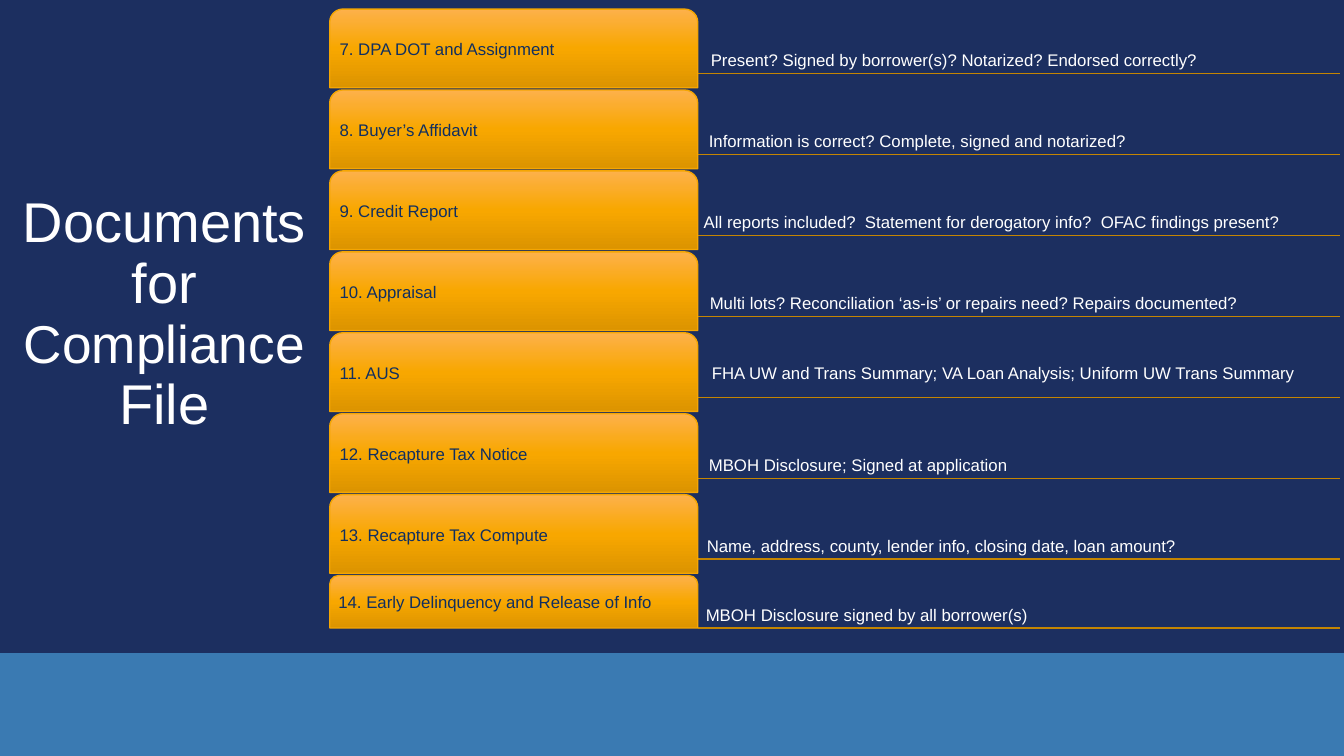
from copy import deepcopy
from dataclasses import dataclass

from lxml import etree
from pptx import Presentation
from pptx.dml.color import RGBColor
from pptx.enum.shapes import MSO_CONNECTOR, MSO_SHAPE
from pptx.enum.text import MSO_ANCHOR, MSO_AUTO_SIZE, PP_ALIGN
from pptx.oxml.ns import qn
from pptx.util import Inches, Pt

RECTANGLE = MSO_SHAPE.RECTANGLE
TAB = MSO_SHAPE.ROUND_2_SAME_RECTANGLE
STRAIGHT = MSO_CONNECTOR.STRAIGHT
MIDDLE, BOTTOM = MSO_ANCHOR.MIDDLE, MSO_ANCHOR.BOTTOM
LEFT, CENTER = PP_ALIGN.LEFT, PP_ALIGN.CENTER
NO_AUTOFIT = MSO_AUTO_SIZE.NONE


@dataclass(frozen=True)
class Theme:
    font: str = "Arial"
    background: str = "1C2F60"
    footer: str = "3A7AB2"
    light: str = "FFFFFF"
    dark: str = "112F60"
    rule: str = "C48502"
    tab_edge: str = "F5A603"
    tab_gradient: tuple = ((0, "FDB14B"), (0.5, "F8A700"), (1, "DC9400"))
    title_size: float = 40
    long_word_size: float = 38
    body_size: float = 12
    line_width: float = 1
    line_spacing: float = 0.9


THEME = Theme()
WIDTH, HEIGHT = 13.33, 7.5
FOOTER_HEIGHT = 1.02
TITLE_BOX = (0.11, 1.92, 3.04, 2.46)
CHECKLIST_BOX = (3.27, 0.09, 10.02, 6.14)
ROW_PITCH = 0.8
ROW_PITCH = 0.8 + 0.02 / 7
TAB_WIDTH, TAB_HEIGHT = 3.65, 0.78
RULE_DROP = 0.64
ANSWER_HEIGHT = 0.52
INSET = 0.03

TITLE_PARTS = (
    ("Documents for ", THEME.title_size),
    ("Compliance", THEME.long_word_size),
    (" File", THEME.title_size),
)

# document, what to check, indent after the tab, lift above the rule
DOCUMENTS = (
    ("7. DPA DOT and Assignment",
     "Present? Signed by borrower(s)? Notarized? Endorsed correctly?", 0.1, 0),
    ("8. Buyer’s Affidavit",
     "Information is correct? Complete, signed and notarized?", 0.08, 0),
    ("9. Credit Report",
     "All reports included?  Statement for derogatory info?  OFAC findings present?", 0.03, 0),
    ("10. Appraisal",
     "Multi lots? Reconciliation ‘as-is’ or repairs need? Repairs documented?", 0.09, 0),
    ("11. AUS",
     "FHA UW and Trans Summary; VA Loan Analysis; Uniform UW Trans Summary", 0.11, 0.11),
    ("12. Recapture Tax Notice",
     "MBOH Disclosure; Signed at application", 0.08, 0),
    ("13. Recapture Tax Compute",
     "Name, address, county, lender info, closing date, loan amount?", 0.06, 0),
    ("14. Early Delinquency and Release of Info",
     "MBOH Disclosure signed by all borrower(s)", 0.05, 0),
)


def inches(*lengths):
    return [Inches(length) for length in lengths]


def color(code):
    return RGBColor.from_string(code)


def write_line(frame, wording, ink, anchor, left_inset):
    frame.word_wrap = True
    frame.vertical_anchor = anchor
    frame.margin_left = Inches(left_inset)
    frame.margin_top = frame.margin_right = frame.margin_bottom = Inches(INSET)
    line = frame.paragraphs[0]
    line.text = wording
    line.alignment = LEFT
    line.line_spacing = THEME.line_spacing
    line.font.name = THEME.font
    line.font.size = Pt(THEME.body_size)
    line.font.color.rgb = color(ink)


def add_footer(slide, box):
    footer = slide.shapes.add_shape(RECTANGLE, *inches(*box))
    footer.shadow.inherit = False
    footer.fill.solid()
    footer.fill.fore_color.rgb = color(THEME.footer)
    footer.line.fill.background()


def add_title(slide, box):
    title = slide.shapes.title
    title.left, title.top, title.width, title.height = inches(*box)
    frame = title.text_frame
    frame.word_wrap = True
    frame.auto_size = NO_AUTOFIT
    frame.vertical_anchor = BOTTOM
    heading = frame.paragraphs[0]
    heading.alignment = CENTER
    heading.line_spacing = THEME.line_spacing
    heading.font.name = THEME.font
    heading.font.color.rgb = color(THEME.light)
    for wording, size in TITLE_PARTS:
        part = heading.add_run()
        part.text = wording
        part.font.size = Pt(size)


def fill_gradient(shape):
    shape.fill.gradient()
    shape.fill.gradient_angle = 270
    stop_list = shape._element.spPr.find(qn("a:gradFill")).find(qn("a:gsLst"))
    stop_list.append(deepcopy(stop_list[0]))
    for stop, (position, code) in zip(shape.fill.gradient_stops, THEME.tab_gradient):
        stop.position = position
        stop.color.rgb = color(code)


def add_rule(slide, left, right, y):
    rule = slide.shapes.add_connector(STRAIGHT, *inches(left, y, right, y))
    rule.line.color.rgb = color(THEME.rule)
    rule.line.width = Pt(THEME.line_width)
    etree.SubElement(rule._element.spPr, qn("a:effectLst"))


def add_tab(slide, box, wording):
    tab = slide.shapes.add_shape(TAB, *inches(*box))
    tab.shadow.inherit = False
    tab.adjustments[0] = 0.167
    fill_gradient(tab)
    tab.line.color.rgb = color(THEME.tab_edge)
    tab.line.width = Pt(THEME.line_width)
    write_line(tab.text_frame, wording, THEME.dark, MIDDLE, 2 * INSET)


def add_checklist(slide, box):
    left, top, width, height = box
    right, bottom = left + width, top + height
    answer_left = left + TAB_WIDTH
    for row, (document, check, indent, lift) in enumerate(DOCUMENTS):
        row_top = top + row * ROW_PITCH
        tab_height = min(TAB_HEIGHT, bottom - row_top)
        rule_y = min(row_top + RULE_DROP, bottom)
        add_rule(slide, answer_left, right, rule_y)
        add_tab(slide, (left, row_top, TAB_WIDTH, tab_height), document)
        answer = slide.shapes.add_textbox(*inches(
            answer_left + indent, rule_y - lift - ANSWER_HEIGHT,
            right - answer_left - indent, ANSWER_HEIGHT))
        write_line(answer.text_frame, check, THEME.light, BOTTOM, INSET)


def main():
    deck = Presentation()
    deck.slide_width, deck.slide_height = inches(WIDTH, HEIGHT)
    slide = deck.slides.add_slide(deck.slide_layouts[5])
    slide.background.fill.solid()
    slide.background.fill.fore_color.rgb = color(THEME.background)
    add_footer(slide, (0, HEIGHT - FOOTER_HEIGHT, WIDTH, FOOTER_HEIGHT))
    add_title(slide, TITLE_BOX)
    add_checklist(slide, CHECKLIST_BOX)
    deck.save("out.pptx")


if __name__ == "__main__":
    main()
